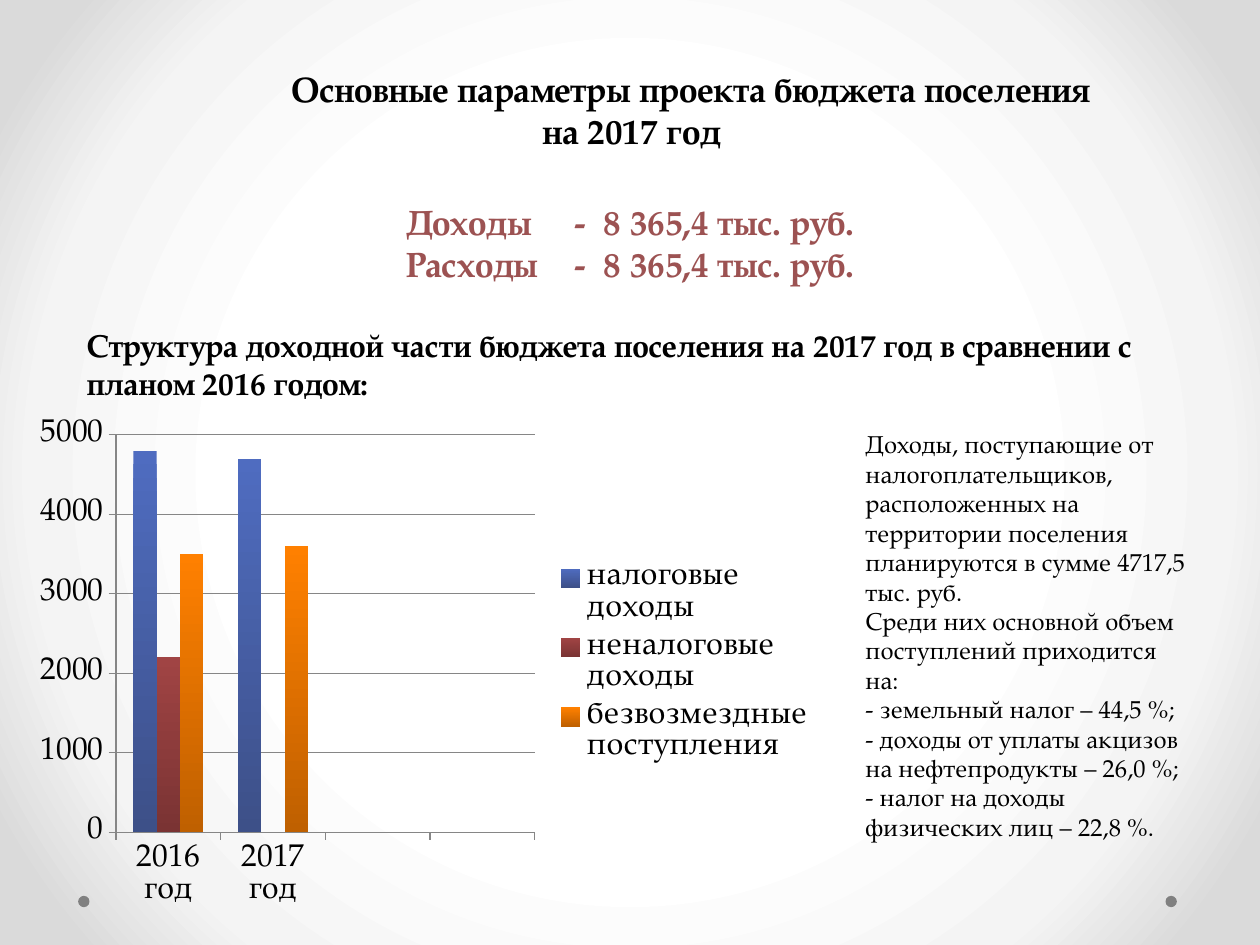
from lxml.etree import SubElement
from pptx import Presentation
from pptx.chart.data import CategoryChartData
from pptx.dml.color import RGBColor
from pptx.enum.chart import XL_CHART_TYPE, XL_LEGEND_POSITION, XL_TICK_MARK
from pptx.enum.shapes import MSO_SHAPE
from pptx.enum.text import PP_ALIGN
from pptx.oxml import parse_xml
from pptx.oxml.ns import nsdecls, qn
from pptx.util import Inches, Pt

FONT = "TeX Gyre Pagella"
CELL = Inches(0.1)  # grid of 100 columns by 75 rows
COLUMNS, ROWS = 100, 75
BLACK, BRICK, GREY = "000000", "9C5252", "868686"

HEADING = ["Основные параметры проекта бюджета поселения", "на 2017 год"]
TOTALS = ["Доходы\t-\t8 365,4 тыс. руб.", "Расходы\t-\t8 365,4 тыс. руб."]
STRUCTURE = ["Структура доходной части бюджета поселения на 2017 год "
             "в сравнении с планом 2016 годом:"]
COMMENTARY = [
    "Доходы, поступающие от налогоплательщиков, расположенных на территории "
    "поселения планируются в сумме 4717,5 тыс. руб.",
    "Среди них основной объем поступлений приходится на:",
    "- земельный налог – 44,5 %;",
    "- доходы от уплаты акцизов на нефтепродукты – 26,0 %;",
    "- налог на доходы физических лиц – 22,8 %.",
]
YEARS = ["2016 год", "2017 год", "", ""]
INCOME = [  # name, values, top and bottom colour of the bars
    ("налоговые доходы", (4800, 4700, None, None), ("4F6CC0", "3D5088")),
    ("неналоговые доходы", (2200, 0, None, None), ("A04444", "7A3333")),
    ("безвозмездные поступления", (3500, 3600, None, None), ("FF8000", "BF6000")),
]


def rgb(value):
    return RGBColor.from_string(value)


def grid(*cells):
    return [round(cell * CELL) for cell in cells]


def apply(target, values):
    for name, value in values.items():
        setattr(target, name, value)


def style_font(font, size, color=BLACK, bold=False):
    apply(font, {"name": FONT, "size": Pt(size), "bold": bold})
    font.color.rgb = rgb(color)


def write(slide, box, lines, size, color=BLACK, bold=False, align=PP_ALIGN.LEFT):
    """Place a text box and return its paragraphs."""
    frame = slide.shapes.add_textbox(*grid(*box)).text_frame
    frame.word_wrap = True
    frame.text = "\n".join(lines)
    for paragraph in frame.paragraphs:
        paragraph.alignment = align
        for run in paragraph.runs:
            style_font(run.font, size, color, bold)
    return frame.paragraphs


def paint_background(slide):
    stops = "".join(
        f'<a:gs pos="{share * 1000}"><a:srgbClr val="{color}"/></a:gs>'
        for share, color in ((50, "FFFFFF"), (76, "F4F4F4"), (92, "DADADA")))
    slide.element.cSld.insert(0, parse_xml(
        f'<p:bg {nsdecls("p", "a")}><p:bgPr><a:gradFill rotWithShape="1">'
        f'<a:gsLst>{stops}</a:gsLst><a:path path="circle">'
        '<a:fillToRect l="50000" t="50000" r="50000" b="50000"/></a:path>'
        '</a:gradFill><a:effectLst/></p:bgPr></p:bg>'))


def add_corner_dots(slide, columns, top, size):
    for column in columns:
        dot = slide.shapes.add_shape(MSO_SHAPE.OVAL, *grid(column, top, size, size))
        dot.shadow.inherit = False
        dot.fill.solid()
        dot.fill.fore_color.rgb = rgb("808080")
        dot.line.fill.background()


def add_heading(slide, box):
    first, _ = write(slide, box, HEADING, 20, bold=True, align=PP_ALIGN.CENTER)
    first._p.get_or_add_pPr().set("marL", str(Inches(0.94)))


def add_totals(slide, box):
    for paragraph in write(slide, box, TOTALS, 20, BRICK, bold=True):
        stops = SubElement(paragraph._p.get_or_add_pPr(), qn("a:tabLst"))
        for column in grid(13.4, 15.7):
            SubElement(stops, qn("a:tab"), pos=str(column), algn="l")


def add_income_chart(slide, box):
    data = CategoryChartData()
    data.categories = YEARS
    for name, values, _ in INCOME:
        data.add_series(name, values)
    chart = slide.shapes.add_chart(
        XL_CHART_TYPE.COLUMN_CLUSTERED, *grid(*box), data).chart
    style_font(chart.font, 18)
    apply(chart, {"has_title": False, "has_legend": True})
    apply(chart.legend, {"position": XL_LEGEND_POSITION.RIGHT,
                         "include_in_layout": False})
    plot = chart.plots[0]
    apply(plot, {"gap_width": 150, "overlap": 0, "vary_by_categories": False})
    for series, (_, _, shades) in zip(plot.series, INCOME):
        fill = series.format.fill
        fill.gradient()
        fill.gradient_angle = 270
        for stop, shade in zip(fill.gradient_stops, shades):
            stop.color.rgb = rgb(shade)
    values = chart.value_axis
    apply(values, {"minimum_scale": 0, "maximum_scale": 5000, "major_unit": 1000,
                   "has_major_gridlines": True})
    for axis in (values, chart.category_axis):
        axis.major_tick_mark = XL_TICK_MARK.OUTSIDE
    for part in (values, chart.category_axis, values.major_gridlines):
        part.format.line.color.rgb = rgb(GREY)
        part.format.line.width = Pt(0.7)


def build_budget_slide(presentation):
    slide = presentation.slides.add_slide(presentation.slide_layouts[6])
    paint_background(slide)
    add_corner_dots(slide, (6.2, 92.5), 71.1, 0.9)
    add_heading(slide, (5.15, 4.85, 90, 7.7))
    add_totals(slide, (31.25, 15.45, 40, 7.7))
    write(slide, (5.9, 25.4, 89, 7.1), STRUCTURE, 18, bold=True)
    add_income_chart(slide, (1.95, 32.45, 63.8, 40.4))
    write(slide, (67.7, 33.6, 27.5, 34), COMMENTARY, 14)


def main():
    presentation = Presentation()
    apply(presentation, {"slide_width": COLUMNS * CELL, "slide_height": ROWS * CELL})
    build_budget_slide(presentation)
    presentation.save("out.pptx")


if __name__ == "__main__":
    main()
